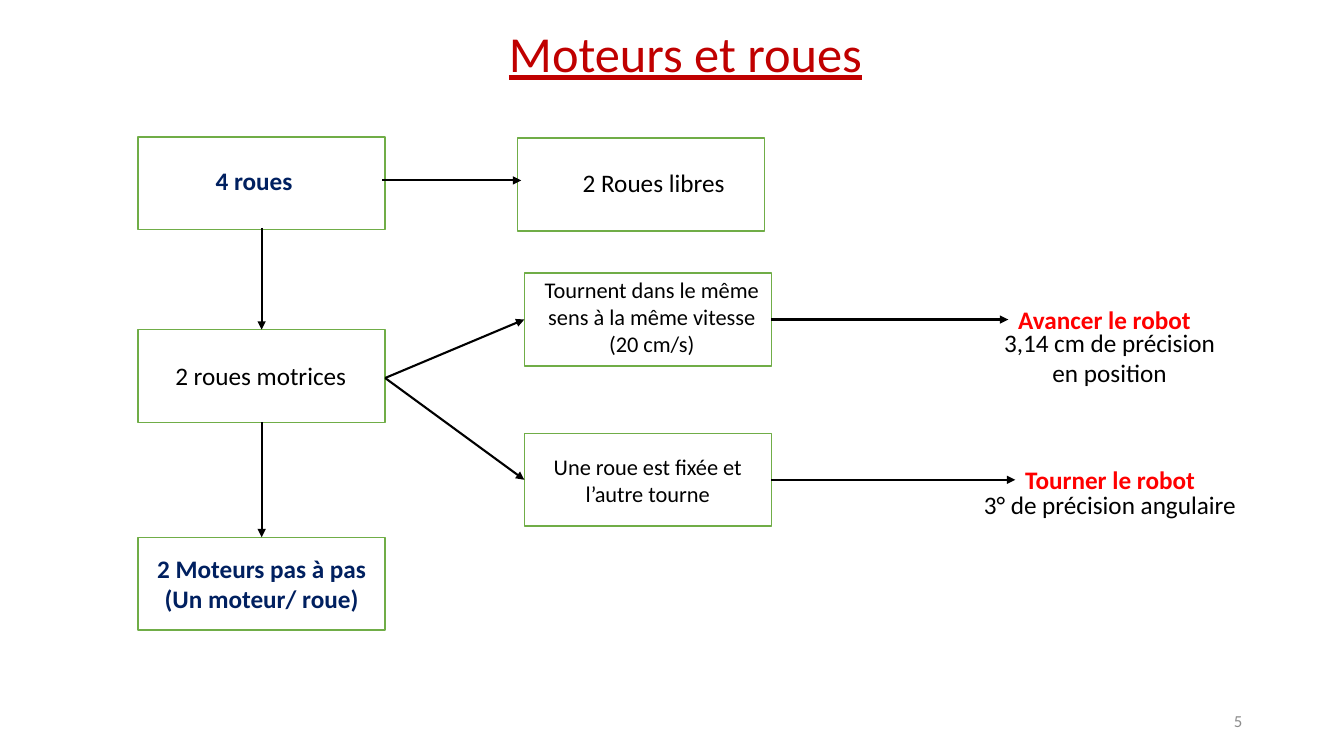
"""Build the slide on the motors and wheels of a robot."""
from dataclasses import dataclass

from lxml import etree
from pptx import Presentation
from pptx.dml.color import RGBColor
from pptx.enum.shapes import MSO_CONNECTOR, MSO_SHAPE
from pptx.enum.text import MSO_ANCHOR, PP_ALIGN
from pptx.oxml.ns import qn
from pptx.util import Inches, Pt

RECTANGLE = MSO_SHAPE.RECTANGLE
STRAIGHT = MSO_CONNECTOR.STRAIGHT
LEFT, CENTER, RIGHT = PP_ALIGN.LEFT, PP_ALIGN.CENTER, PP_ALIGN.RIGHT
TOP, MIDDLE = MSO_ANCHOR.TOP, MSO_ANCHOR.MIDDLE


@dataclass(frozen=True)
class Theme:
    """Colours, font and type sizes of the slide."""
    font: str = "Calibri"
    white: str = "FFFFFF"
    black: str = "000000"
    green: str = "70AD47"
    navy: str = "002060"
    red: str = "FF0000"
    title_red: str = "C00000"
    grey: str = "8C8C8C"
    title: int = 36
    body: int = 18
    detail: int = 16
    number: int = 12
    border: float = 1
    arrow: float = 1.5


THEME = Theme()
BOX_WIDTH, BOX_HEIGHT = 2.45, 0.92
WHEEL_X, FREE_X, MOTION_X = 1.37, 5.13, 5.2
WHEELS_Y, FREE_Y, DRIVE_Y, MOTORS_Y = 1.36, 1.37, 3.27, 5.33
FORWARD_Y, TURN_Y = 2.71, 4.3


def write(frame, lines, size=THEME.body, color=THEME.black, bold=False,
          underline=False, align=LEFT, anchor=TOP, spacing=None):
    """Fill a text frame with one styled paragraph per line."""
    frame.word_wrap = True
    frame.vertical_anchor = anchor
    for index, line in enumerate(lines):
        paragraph = frame.paragraphs[0] if index == 0 else frame.add_paragraph()
        paragraph.alignment = align
        if spacing:
            paragraph.line_spacing = spacing
        run = paragraph.add_run()
        run.text = line
        font = run.font
        font.name, font.size = THEME.font, Pt(size)
        font.bold, font.underline = bold, underline
        font.color.rgb = RGBColor.from_string(color)


def add_box(slide, left, top, lines=(), **style):
    """Add a white box with a green border and optional centred text."""
    box = slide.shapes.add_shape(RECTANGLE, Inches(left), Inches(top),
                                 Inches(BOX_WIDTH), Inches(BOX_HEIGHT))
    box.shadow.inherit = False
    box.fill.solid()
    box.fill.fore_color.rgb = RGBColor.from_string(THEME.white)
    box.line.color.rgb = RGBColor.from_string(THEME.green)
    box.line.width = Pt(THEME.border)
    write(box.text_frame, lines, align=CENTER, anchor=MIDDLE, **style)


def add_label(slide, left, top, width, height, text, wrap=True, **style):
    """Add a text box holding a single paragraph."""
    label = slide.shapes.add_textbox(Inches(left), Inches(top),
                                     Inches(width), Inches(height))
    write(label.text_frame, [text], **style)
    label.text_frame.word_wrap = wrap


def add_arrow(slide, start, end):
    """Add a black line with a triangle head at its end."""
    arrow = slide.shapes.add_connector(
        STRAIGHT, *(Inches(value) for value in (*start, *end)))
    arrow.line.color.rgb = RGBColor.from_string(THEME.black)
    arrow.line.width = Pt(THEME.arrow)
    etree.SubElement(arrow.line._get_or_add_ln(), qn("a:tailEnd"), type="triangle")
    etree.SubElement(arrow._element.spPr, qn("a:effectLst"))


def add_boxes(slide):
    """Add the wheel, motor and motion boxes."""
    add_box(slide, WHEEL_X, WHEELS_Y)
    add_box(slide, WHEEL_X, DRIVE_Y)
    add_box(slide, FREE_X, FREE_Y)
    add_box(slide, WHEEL_X, MOTORS_Y, ["2 Moteurs pas à pas", "(Un moteur/ roue)"],
            color=THEME.navy, bold=True)
    add_box(slide, MOTION_X, TURN_Y, ["Une roue est fixée et l’autre tourne"],
            size=THEME.detail)
    add_box(slide, MOTION_X, FORWARD_Y)


def add_arrows(slide):
    """Link the boxes to each other and to the resulting movements."""
    wheel_center = WHEEL_X + BOX_WIDTH / 2
    drive_exit = (WHEEL_X + BOX_WIDTH, 3.75)
    add_arrow(slide, (3.79, 1.79), (5.17, 1.79))
    add_arrow(slide, (wheel_center, 2.26), (wheel_center, DRIVE_Y))
    add_arrow(slide, (wheel_center, DRIVE_Y + BOX_HEIGHT), (wheel_center, MOTORS_Y))
    for top, result_x in ((FORWARD_Y, 10), (TURN_Y, 10.07)):
        middle = top + BOX_HEIGHT / 2
        add_arrow(slide, drive_exit, (MOTION_X, middle))
        add_arrow(slide, (MOTION_X + BOX_WIDTH, middle), (result_x, middle))


def add_labels(slide):
    """Add the wheel names, the movements and their precision."""
    add_label(slide, 2.04, 1.59, 2.03, 0.4, "4 roues", color=THEME.navy, bold=True)
    add_label(slide, 1.64, 3.53, 2.34, 0.4, "2 roues motrices")
    add_label(slide, 5.68, 1.61, 2.01, 0.4, "2 Roues libres")
    add_label(slide, 5.28, 2.69, 2.37, 0.91,
              "Tournent dans le même sens à la même vitesse (20 cm/s)",
              size=THEME.detail, align=CENTER)
    add_label(slide, 10, 2.97, 2.28, 0.4, "Avancer le robot",
              color=THEME.red, bold=True)
    add_label(slide, 10.07, 4.56, 2.28, 0.4, "Tourner le robot",
              color=THEME.red, bold=True)
    add_label(slide, 9.73, 3.2, 2.55, 0.71, "3,14 cm de précision en position",
              align=CENTER)
    add_label(slide, 9.66, 4.81, 2.73, 0.4, "3° de précision angulaire", wrap=False)


def main():
    """Build and save the presentation."""
    deck = Presentation()
    deck.slide_width, deck.slide_height = Inches(13.33), Inches(7.5)
    slide = deck.slides.add_slide(deck.slide_layouts[6])
    add_boxes(slide)
    add_arrows(slide)
    add_labels(slide)
    add_label(slide, 4.95, 0.24, 4.33, 0.97, "Moteurs et roues", size=THEME.title,
              color=THEME.title_red, underline=True, spacing=0.9)
    add_label(slide, 9.42, 6.95, 3, 0.4, "5", size=THEME.number, color=THEME.grey,
              align=RIGHT, anchor=MIDDLE)
    deck.save("out.pptx")


if __name__ == "__main__":
    main()
